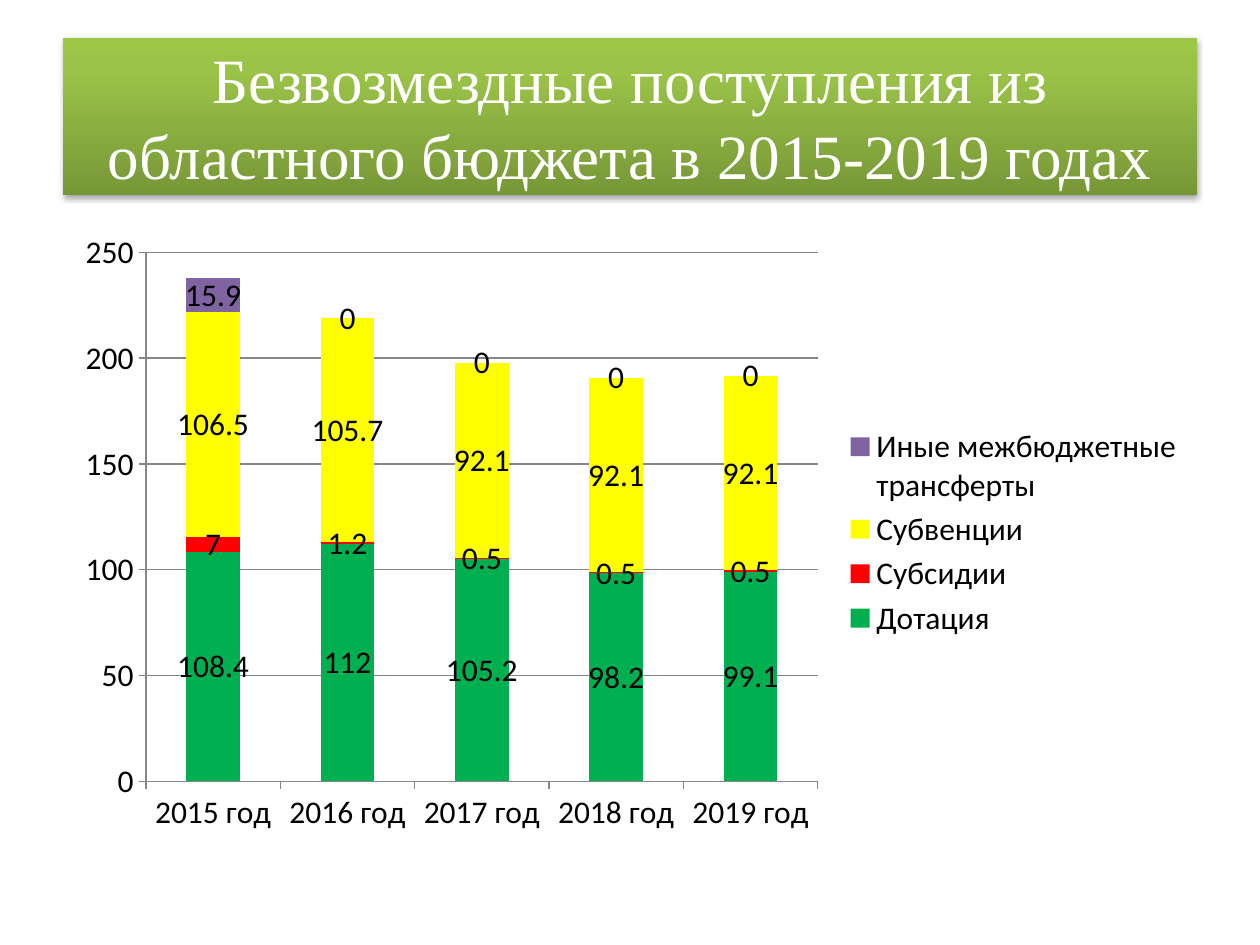
from dataclasses import dataclass

from pptx import Presentation
from pptx.chart.data import CategoryChartData
from pptx.dml.color import RGBColor
from pptx.enum.chart import XL_CHART_TYPE, XL_LEGEND_POSITION, XL_TICK_MARK
from pptx.enum.text import MSO_ANCHOR, MSO_AUTO_SIZE, PP_ALIGN
from pptx.oxml import parse_xml
from pptx.oxml.ns import nsdecls
from pptx.util import Cm, Pt


@dataclass(frozen=True)
class Theme:
    title_font: str = "Times New Roman"
    chart_font: str = "Calibri"
    title_size: int = 36
    chart_size: int = 18
    title_color: str = "FFFFFF"
    chart_color: str = "000000"
    axis_color: str = "868686"
    banner_stops: tuple = ((0, "779737"), (80, "9BC348"), (100, "9DC746"))
    series_colors: tuple = ("00B050", "FF0000", "FFFF00", "8064A2")


THEME = Theme()
MARGIN = Cm(1.27)
CONTENT_WIDTH = Cm(22.86)
YEARS = [f"{year} год" for year in range(2015, 2020)]
TRANSFERS = {
    "Дотация": (108.4, 112, 105.2, 98.2, 99.1),
    "Субсидии": (7, 1.2, 0.5, 0.5, 0.5),
    "Субвенции": (106.5, 105.7, 92.1, 92.1, 92.1),
    "Иные межбюджетные трансферты": (15.9, 0, 0, 0, 0),
}


def style_font(font, name, size, color):
    font.name = name
    font.size = Pt(size)
    font.color.rgb = RGBColor.from_string(color)


def paint_banner(shape):
    stops = "".join(
        f'<a:gs pos="{position * 1000}"><a:srgbClr val="{color}"/></a:gs>'
        for position, color in THEME.banner_stops
    )
    gradient = (
        f'<a:gradFill {nsdecls("a")} rotWithShape="1"><a:gsLst>{stops}</a:gsLst>'
        '<a:lin ang="16200000" scaled="0"/></a:gradFill>'
    )
    shadow = (
        f'<a:effectLst {nsdecls("a")}>'
        f'<a:outerShdw blurRad="{Pt(3.1)}" dist="{Pt(1.8)}" dir="5400000" rotWithShape="0">'
        '<a:srgbClr val="000000"><a:alpha val="35000"/></a:srgbClr>'
        "</a:outerShdw></a:effectLst>"
    )
    for markup in (gradient, shadow):
        shape.element.spPr.append(parse_xml(markup))


def add_title(page, text):
    title = page.shapes.title
    title.left, title.top = MARGIN, Cm(0.76)
    title.width, title.height = CONTENT_WIDTH, Cm(3.18)
    paint_banner(title)
    frame = title.text_frame
    frame.text = text
    frame.word_wrap = True
    frame.auto_size = MSO_AUTO_SIZE.NONE
    frame.vertical_anchor = MSO_ANCHOR.MIDDLE
    para = frame.paragraphs[0]
    para.alignment = PP_ALIGN.CENTER
    style_font(para.runs[0].font, THEME.title_font, THEME.title_size, THEME.title_color)


def style_axes(chart):
    axis_color = RGBColor.from_string(THEME.axis_color)
    value_axis = chart.value_axis
    value_axis.has_major_gridlines = True
    for axis in (chart.category_axis, value_axis):
        axis.major_tick_mark = XL_TICK_MARK.OUTSIDE
        axis.minor_tick_mark = XL_TICK_MARK.NONE
    for part in (chart.category_axis, value_axis, value_axis.major_gridlines):
        part.format.line.color.rgb = axis_color
        part.format.line.width = Pt(0.75)


def add_stacked_chart(page, categories, values_by_name):
    data = CategoryChartData()
    data.categories = categories
    for name, values in values_by_name.items():
        data.add_series(name, values)
    chart = page.shapes.add_chart(
        XL_CHART_TYPE.COLUMN_STACKED, MARGIN, Cm(4.45), CONTENT_WIDTH, Cm(12.57), data
    ).chart
    style_font(chart.font, THEME.chart_font, THEME.chart_size, THEME.chart_color)
    chart.has_title = False
    chart.has_legend = True
    chart.legend.position = XL_LEGEND_POSITION.RIGHT
    chart.legend.include_in_layout = False
    style_axes(chart)
    plot = chart.plots[0]
    plot.gap_width = 150
    plot.overlap = 100
    plot.vary_by_categories = False
    for series, color in zip(plot.series, THEME.series_colors):
        series.format.fill.solid()
        series.format.fill.fore_color.rgb = RGBColor.from_string(color)
        series.data_labels.show_value = True


def main():
    deck = Presentation()
    deck.slide_width, deck.slide_height = Cm(25.4), Cm(19.05)
    page = deck.slides.add_slide(deck.slide_layouts.get_by_name("Title Only"))
    add_title(page, "Безвозмездные поступления из областного бюджета в 2015-2019 годах")
    add_stacked_chart(page, YEARS, TRANSFERS)
    deck.save("out.pptx")


if __name__ == "__main__":
    main()
